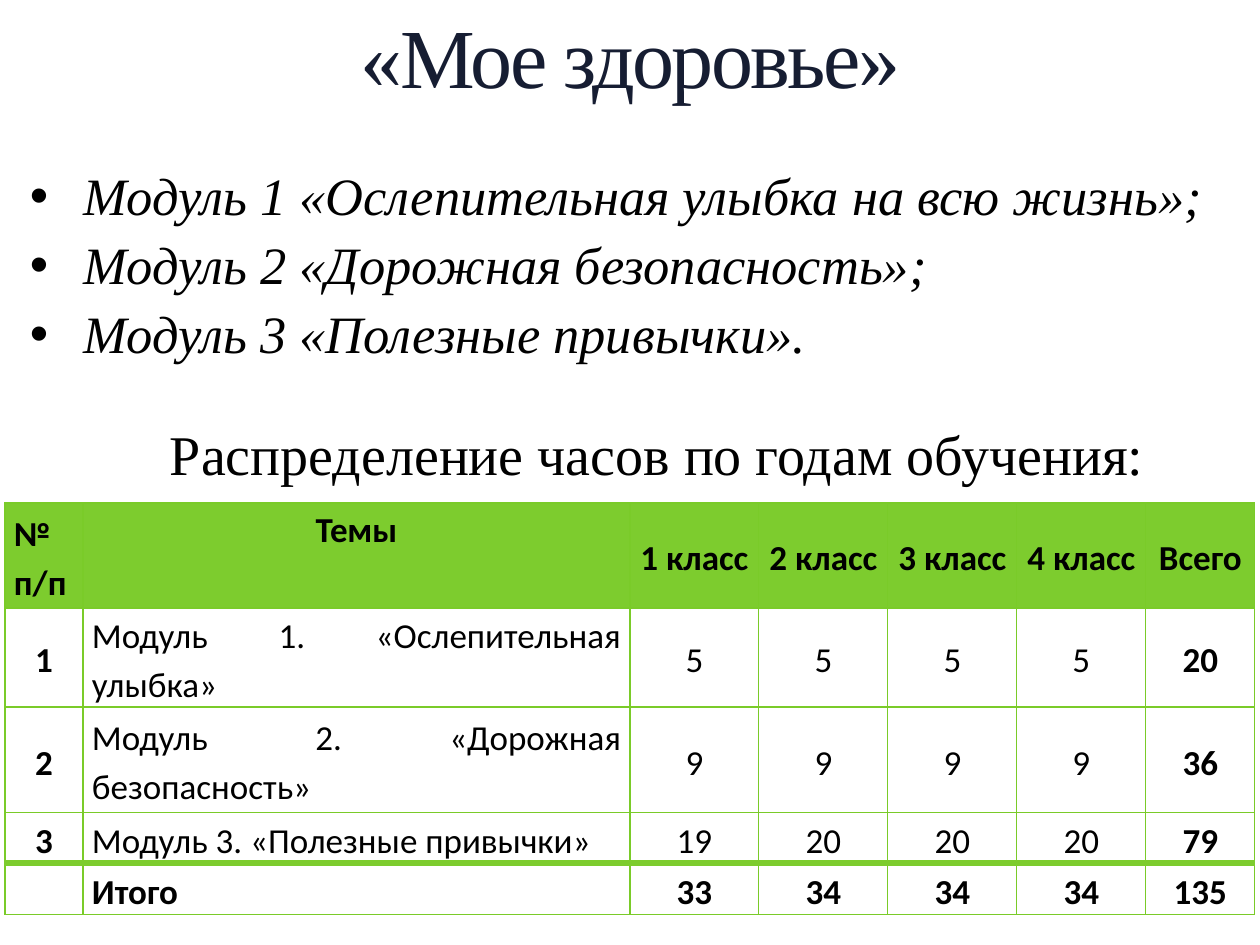
from lxml import etree
from pptx import Presentation
from pptx.dml.color import RGBColor
from pptx.enum.text import MSO_ANCHOR, PP_ALIGN
from pptx.oxml.ns import qn
from pptx.util import Pt

SCALE = 914400 // 126
MIDDLE, TOP = MSO_ANCHOR.MIDDLE, MSO_ANCHOR.TOP
CENTER, LEFT, JUST = PP_ALIGN.CENTER, PP_ALIGN.LEFT, PP_ALIGN.JUSTIFY
SERIF, SANS = "Times New Roman", "Calibri"
BLACK, NAVY, GREEN, LIME = "000000", "161D32", "7ACB29", "7DCC2E"
COLS = [78, 547, 129, 129, 129, 129, 109]
ROWS = [105, 99, 106, 50, 52]
HOURS = [
    ["№\nп/п", "Темы", "1 класс", "2 класс", "3 класс", "4 класс", "Всего"],
    ["1", "Модуль 1. «Ослепительная улыбка»", "5", "5", "5", "5", "20"],
    ["2", "Модуль 2. «Дорожная безопасность»", "9", "9", "9", "9", "36"],
    ["3", "Модуль 3. «Полезные привычки»", "19", "20", "20", "20", "79"],
    ["", "Итого", "33", "34", "34", "34", "135"],
]
MODULES = [
    "Модуль 1 «Ослепительная улыбка на всю жизнь»;",
    "Модуль 2 «Дорожная безопасность»;",
    "Модуль 3 «Полезные привычки».",
]


def px(n):
    """Turn pixels into EMU."""
    return n * SCALE


def rgb(code):
    """Turn a hex string into a colour."""
    return RGBColor.from_string(code)


def add_run(para, text, size, face, color=BLACK, bold=False, italic=False):
    """Add one styled run to a paragraph."""
    run = para.add_run()
    run.text = text
    font = run.font
    font.size, font.name = Pt(size), face
    font.bold, font.italic = bold, italic
    font.color.rgb = rgb(color)
    return run


def add_box(slide, x, y, w, h, inset=(0, 0), wrap=True):
    """Add a text box and return its frame."""
    frame = slide.shapes.add_textbox(px(x), px(y), px(w), px(h)).text_frame
    frame.word_wrap, frame.vertical_anchor = wrap, TOP
    frame.margin_left = frame.margin_right = px(inset[0])
    frame.margin_top = frame.margin_bottom = px(inset[1])
    return frame


def indent(para, left, first):
    """Set the left margin and first-line indent."""
    props = para._p.get_or_add_pPr()
    props.set("marL", str(px(left)))
    props.set("indent", str(px(first)))
    return props


def add_title(slide):
    """Add the slide title."""
    para = add_box(slide, 53, 16, 1155, 92).paragraphs[0]
    para.alignment, para.line_spacing = CENTER, 0.9
    run = add_run(para, "«Мое здоровье»", 48, SERIF, NAVY)
    run.font._element.set("spc", "-150")


def add_list(slide):
    """Add the bulleted list of modules."""
    frame = add_box(slide, 30, 165, 1201, 272, (0, 5))
    for i, text in enumerate(MODULES):
        para = frame.add_paragraph() if i else frame.paragraphs[0]
        props = indent(para, 54, -54)
        etree.SubElement(props, qn("a:buFont")).set("typeface", "Arial")
        etree.SubElement(props, qn("a:buChar")).set("char", "•")
        para.line_spacing = 0.9
        if i:
            para.space_before = Pt(7)
        add_run(para, text, 30, SERIF, italic=True)


def add_caption(slide):
    """Add the heading above the table."""
    para = add_box(slide, 95, 413, 1072, 118, (13, 7), False).paragraphs[0]
    para.alignment = LEFT
    indent(para, 0, 62)
    add_run(para, "Распределение часов по годам обучения:", 32, SERIF)


def add_edge(cell, side, color, width):
    """Draw one border of a cell."""
    line = etree.SubElement(cell._tc.get_or_add_tcPr(), qn("a:" + side))
    line.set("w", str(Pt(width)))
    fill = etree.SubElement(line, qn("a:solidFill"))
    etree.SubElement(fill, qn("a:srgbClr")).set("val", color)


def fill_cell(cell, row, col, text):
    """Set the borders, fill and text of a cell."""
    last = len(ROWS) - 1
    heavy = {(last, "lnT"), (last - 1, "lnB")}
    for side in ("lnL", "lnR", "lnT", "lnB"):
        color, width = (LIME, 4) if (row, side) in heavy else (GREEN, 0.75)
        add_edge(cell, side, color, width)
    if row:
        cell.fill.background()
    else:
        cell.fill.solid()
        cell.fill.fore_color.rgb = rgb(LIME)
    cell.margin_left = cell.margin_right = px(9)
    cell.margin_top = cell.margin_bottom = 0
    cell.vertical_anchor = TOP if (row, col) == (0, 1) else MIDDLE
    just = (row, col) == (0, 0) or (row and col == 1)
    bold = row in (0, last) or col in (0, len(COLS) - 1)
    frame = cell.text_frame
    for i, part in enumerate(text.split("\n")):
        para = frame.add_paragraph() if i else frame.paragraphs[0]
        para.alignment = JUST if just else CENTER
        para.line_spacing = 1.15
        if part:
            add_run(para, part, 20, SANS, bold=bold)


def add_hours(slide):
    """Add the table of hours."""
    table = slide.shapes.add_table(
        len(ROWS), len(COLS), px(5), px(503), px(sum(COLS)), px(sum(ROWS))
    ).table
    table.first_row = table.horz_banding = False
    for col, width in zip(table.columns, COLS):
        col.width = px(width)
    for row, height in zip(table.rows, ROWS):
        row.height = px(height)
    for r, texts in enumerate(HOURS):
        for c, text in enumerate(texts):
            fill_cell(table.cell(r, c), r, c, text)


def main():
    """Build and save the slide."""
    deck = Presentation()
    deck.slide_width, deck.slide_height = px(1260), px(945)
    slide = deck.slides.add_slide(deck.slide_layouts[6])
    add_title(slide)
    add_list(slide)
    add_hours(slide)
    add_caption(slide)
    deck.save("out.pptx")


if __name__ == "__main__":
    main()
